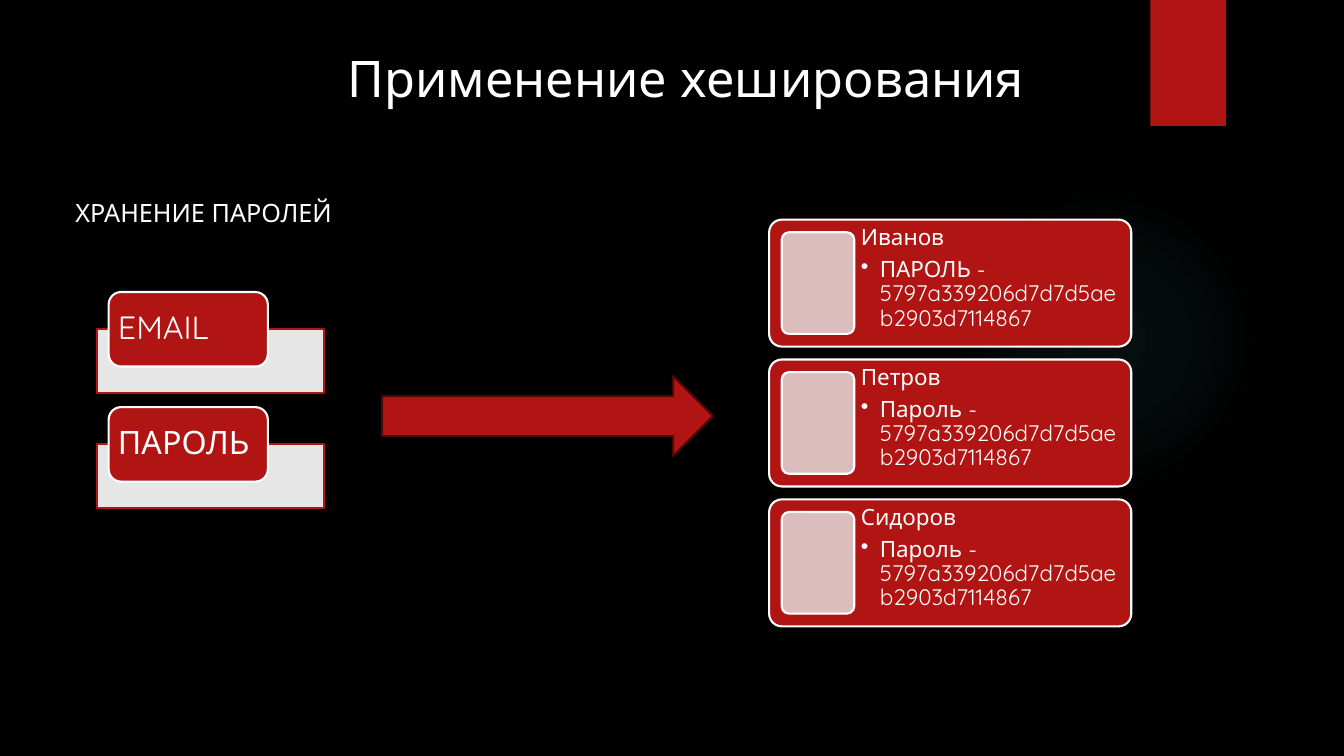
from lxml.etree import SubElement as Sub
from pptx import Presentation
from pptx.dml.color import RGBColor
from pptx.enum.shapes import MSO_SHAPE as Kind
from pptx.enum.text import MSO_ANCHOR as Anchor
from pptx.oxml import parse_xml
from pptx.oxml.ns import nsdecls, qn
from pptx.util import Pt

RED, WHITE, PINK = "B01513", "FFFFFF", "DCBDBD"
HASH = "5797a339206d7d7d5aeb2903d7114867"


def paint(fill, color, alpha=None):
    fill.solid()
    fill.fore_color.rgb = RGBColor.from_string(color)
    if alpha:
        node = fill._xPr.find(".//" + qn("a:srgbClr"))
        Sub(node, qn("a:alpha"), val=str(alpha * 1000))


def draw(slide, kind, box, color, line=None, alpha=None, round=None):
    shape = slide.shapes.add_shape(kind, *map(Pt, box))
    shape.shadow.inherit = False
    paint(shape.fill, color, alpha)
    if line:
        paint(shape.line.fill, line)
        shape.line.width = Pt(1.5)
    else:
        shape.line.fill.background()
    if round:
        shape.adjustments[0] = round
    return shape


def write(slide, box, text, size, points=(), inset=(7.2, 3.6),
          anchor=Anchor.TOP, wrap=True, tight=False):
    frame = slide.shapes.add_textbox(*map(Pt, box)).text_frame
    frame.word_wrap = wrap
    frame.vertical_anchor = anchor
    frame.margin_left = frame.margin_right = Pt(inset[0])
    frame.margin_top = frame.margin_bottom = Pt(inset[1])
    for i, words in enumerate([text, *points]):
        para = frame.add_paragraph() if i else frame.paragraphs[0]
        if i:
            para.level = 1
            props = para._p.get_or_add_pPr()
            props.set("marL", str(Pt(13.5)))
            props.set("indent", str(-Pt(13.5)))
            Sub(props, qn("a:buChar"), char="•")
        if tight:
            para.line_spacing = 0.9
            para.space_after = Pt(size * (0.15 if i else 0.35))
        run = para.add_run()
        run.text = words
        run.font.name = "Quicksand"
        run.font.size = Pt(size)
        run.font.color.rgb = RGBColor.from_string(WHITE)


def glow(slide, box):
    shape = draw(slide, Kind.OVAL, box, "50B9C1")
    stops = "".join(
        f'<a:gs pos="{pos}000"><a:srgbClr val="50B9C1">'
        f'<a:alpha val="{alpha}000"/></a:srgbClr></a:gs>'
        for pos, alpha in ((0, 7), (36, 6), (69, 0)))
    grad = parse_xml(
        f'<a:gradFill {nsdecls("a")}><a:gsLst>{stops}</a:gsLst>'
        '<a:path path="circle"><a:fillToRect l="50000" t="50000" '
        'r="50000" b="50000"/></a:path></a:gradFill>')
    props = shape._element.spPr
    props.replace(props.find(qn("a:solidFill")), grad)


def field(slide, left, top, name):
    draw(slide, Kind.RECTANGLE, (left, top + 26.6, 162.4, 45.4),
         WHITE, line=RED, alpha=90)
    draw(slide, Kind.ROUNDED_RECTANGLE, (left + 8.4, top, 113.7, 53.2),
         RED, line=WHITE)
    write(slide, (left + 10.8, top + 2.4, 108.8, 48.4), name, 23,
          inset=(4.3, 0), anchor=Anchor.MIDDLE, tight=True)


def card(slide, left, top, name, label):
    draw(slide, Kind.ROUNDED_RECTANGLE, (left, top, 258.7, 90.7),
         RED, line=WHITE, round=0.1)
    write(slide, (left + 60.8, top, 197.9, 90.7), name, 16,
          points=[f"{label} - {HASH}"], inset=(4.8, 4.8), tight=True)
    draw(slide, Kind.ROUNDED_RECTANGLE, (left + 9, top + 9, 51.8, 72.6),
         PINK, line=WHITE, round=0.1)


def head(slide):
    glow(slide, (677.5, 131.8, 221.8, 221.8))
    draw(slide, Kind.RECTANGLE, (821.8, 0, 54, 90), RED)
    write(slide, (241.2, 30.2, 513.4, 51), "Применение хеширования", 36,
          wrap=False)
    write(slide, (46.8, 137.5, 200.9, 29), "ХРАНЕНИЕ ПАРОЛЕЙ", 18,
          wrap=False)


def main():
    deck = Presentation()
    deck.slide_width, deck.slide_height = Pt(960), Pt(540)
    slide = deck.slides.add_slide(deck.slide_layouts[6])
    paint(slide.background.fill, "000000")
    head(slide)
    draw(slide, Kind.RIGHT_ARROW, (272.9, 268.6, 236.5, 57.2),
         RED, line="4D0908")
    for i, name in enumerate(("EMAIL", "ПАРОЛЬ")):
        field(slide, 69.2, 208.6 + i * 82.2, name)
    people = (("Иванов", "ПАРОЛЬ"), ("Петров", "Пароль"),
              ("Сидоров", "Пароль"))
    for i, (name, label) in enumerate(people):
        card(slide, 549.4, 156.9 + i * 99.9, name, label)
    deck.save("out.pptx")


if __name__ == "__main__":
    main()
